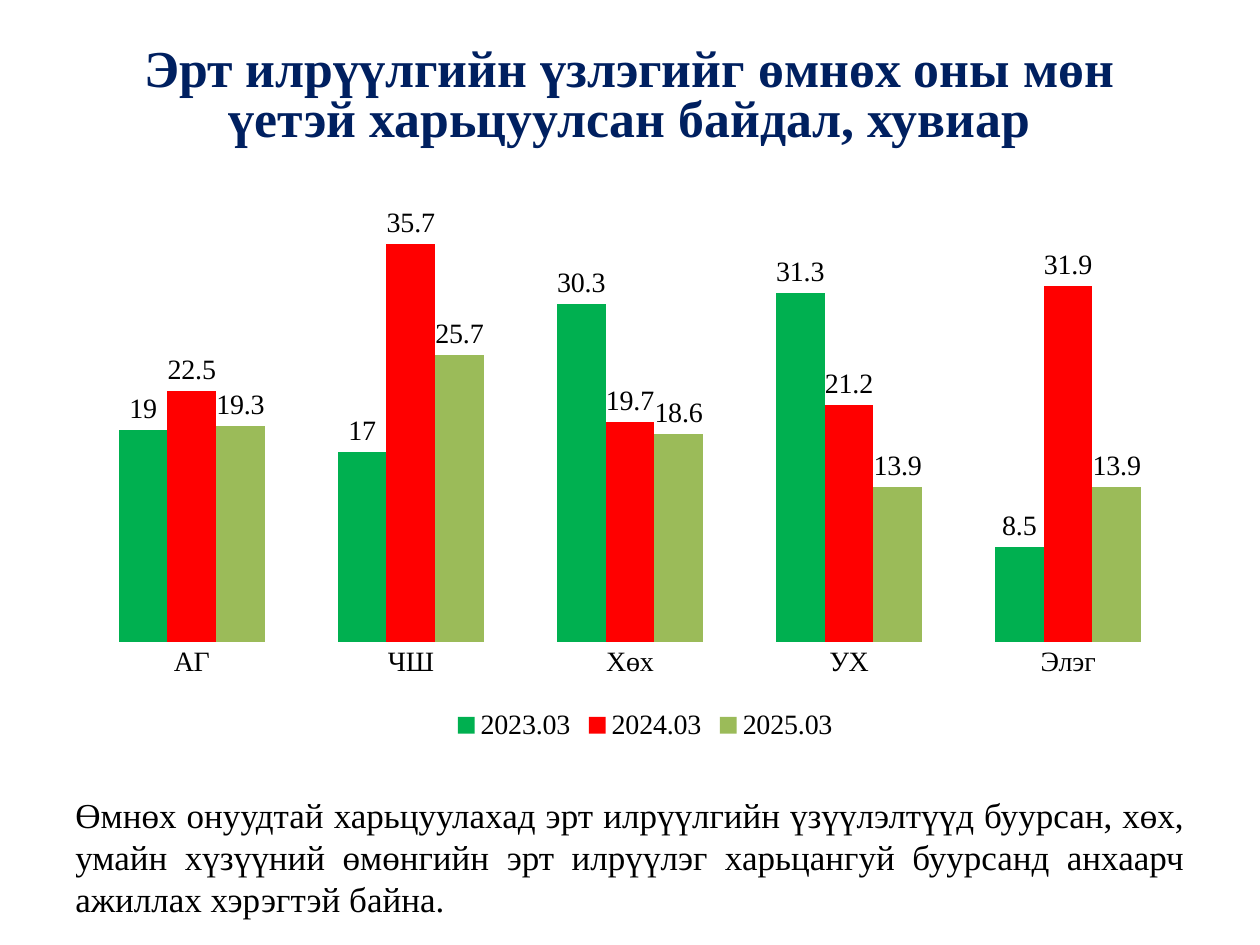
from pptx import Presentation
from pptx.chart.data import CategoryChartData as Data
from pptx.dml.color import RGBColor
from pptx.enum.chart import XL_CHART_TYPE as Kind, XL_LABEL_POSITION as Spot
from pptx.enum.chart import XL_LEGEND_POSITION as Side, XL_TICK_MARK as Tick
from pptx.enum.text import MSO_ANCHOR as Anchor, MSO_AUTO_SIZE as Fit, PP_ALIGN as Align
from pptx.oxml import parse_xml
from pptx.oxml.ns import nsdecls
from pptx.util import Inches, Pt

NAVY = RGBColor(0x00, 0x20, 0x60)
BLACK = RGBColor(0x00, 0x00, 0x00)
GREEN = RGBColor(0x00, 0xB0, 0x50)
RED = RGBColor(0xFF, 0x00, 0x00)
OLIVE = RGBColor(0x9B, 0xBB, 0x59)

TITLE = "Эрт илрүүлгийн үзлэгийг өмнөх оны мөн үетэй харьцуулсан байдал, хувиар"
NOTE = ("Өмнөх онуудтай харьцуулахад эрт илрүүлгийн үзүүлэлтүүд буурсан, хөх, "
        "умайн хүзүүний өмөнгийн эрт илрүүлэг харьцангуй буурсанд анхаарч "
        "ажиллах хэрэгтэй байна.")
ORGANS = ["АГ", "ЧШ", "Хөх", "УХ", "Элэг"]
YEARS = [
    ("2023.03", GREEN, (19, 17, 30.3, 31.3, 8.5)),
    ("2024.03", RED, (22.5, 35.7, 19.7, 21.2, 31.9)),
    ("2025.03", OLIVE, (19.3, 25.7, 18.6, 13.9, 13.9)),
]


class Page:
    """Holds the style and the slide being built."""

    face = "Times New Roman"
    left, width = Inches(0.5), Inches(9)

    def __init__(self, deck):
        self.slide = deck.slides.add_slide(deck.slide_layouts[5])

    def style(self, font, size, color=BLACK, bold=False):
        font.name, font.size, font.bold = self.face, Pt(size), bold
        font.color.rgb = color

    def title(self, text, top, height):
        shape = self.slide.shapes.title
        shape.left, shape.width = self.left, self.width
        shape.top, shape.height = top, height
        frame = shape.text_frame
        frame.text = text
        frame.word_wrap, frame.auto_size = True, Fit.NONE
        frame.vertical_anchor = Anchor.MIDDLE
        para = frame.paragraphs[0]
        para.alignment, para.line_spacing = Align.CENTER, 0.8
        self.style(para.runs[0].font, 29.6, NAVY, True)

    def note(self, text, top, height):
        box = self.slide.shapes.add_textbox(self.left, top, self.width, height)
        frame = box.text_frame
        frame.text = text
        frame.word_wrap, frame.auto_size = True, Fit.SHAPE_TO_FIT_TEXT
        para = frame.paragraphs[0]
        para.alignment = Align.JUSTIFY
        self.style(para.runs[0].font, 20)

    def layout(self, inner=False, **sizes):
        target = '<c:layoutTarget val="inner"/>' if inner else ""
        modes = "".join(f'<c:{key}Mode val="edge"/>' for key in "xy")
        marks = "".join(f'<c:{key} val="{val}"/>' for key, val in sizes.items())
        return parse_xml(f'<c:layout {nsdecls("c")}><c:manualLayout>{target}{modes}'
                         f'{marks}</c:manualLayout></c:layout>')

    def chart(self, cats, rows, top, height):
        data = Data()
        data.categories = cats
        for name, _, vals in rows:
            data.add_series(name, vals)
        chart = self.slide.shapes.add_chart(
            Kind.COLUMN_CLUSTERED, self.left, top, self.width, height, data).chart
        self.style(chart.font, 16)
        chart.has_title = False

        axis = chart.category_axis
        axis.major_tick_mark = axis.minor_tick_mark = Tick.NONE
        axis.format.line.fill.background()
        self.style(axis.tick_labels.font, 16)
        scale = chart.value_axis
        scale.minimum_scale, scale.maximum_scale = 0, 40
        scale.has_major_gridlines = scale.visible = False

        plot = chart.plots[0]
        plot.gap_width, plot.overlap, plot.vary_by_categories = 150, 0, False
        for bars, (_, color, _) in zip(plot.series, rows):
            bars.format.fill.solid()
            bars.format.fill.fore_color.rgb = color
            labels = bars.data_labels
            labels.show_value, labels.position = True, Spot.OUTSIDE_END
            self.style(labels.font, 16)

        chart.has_legend = True
        legend = chart.legend
        legend.position, legend.include_in_layout = Side.BOTTOM, False
        self.style(legend.font, 16)
        area = chart.element.chart.plotArea
        for old in area.xpath("c:layout"):
            area.remove(old)
        area.insert(0, self.layout(True, x=0.017, y=0.029, w=0.966, h=0.773))
        key = chart.element.xpath("c:chart/c:legend")[0]
        for old in key.xpath("c:layout"):
            key.remove(old)
        key.insert(1, self.layout(x=0.34, y=0.91))


def main():
    deck = Presentation()
    deck.slide_width, deck.slide_height = Inches(10), Inches(7.5)
    page = Page(deck)
    page.title(TITLE, Inches(0.3), Inches(0.95))
    page.chart(ORGANS, YEARS, Inches(1.42), Inches(4.58))
    page.note(NOTE, Inches(6.25), Inches(1.11))
    deck.save("out.pptx")


if __name__ == "__main__":
    main()
